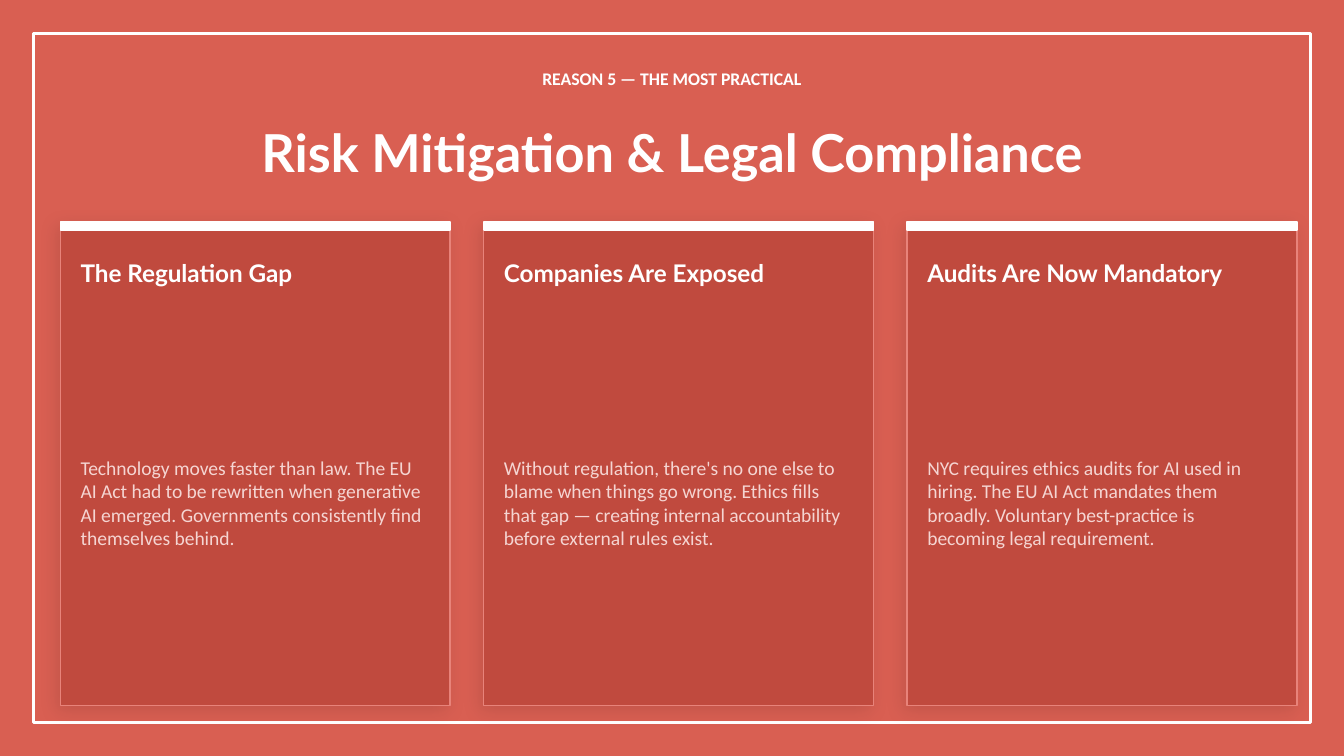
import pptx
import pptx.dml.color
import pptx.enum.shapes
import pptx.enum.text
import pptx.oxml
import pptx.oxml.ns
import pptx.util
from pptx.util import Inches

# Content
KICKER = "REASON 5 — THE MOST PRACTICAL"
TITLE = "Risk Mitigation & Legal Compliance"
CARDS = [
    ("The Regulation Gap",
     "Technology moves faster than law. The EU AI Act had to be rewritten when "
     "generative AI emerged. Governments consistently find themselves behind."),
    ("Companies Are Exposed",
     "Without regulation, there's no one else to blame when things go wrong. Ethics "
     "fills that gap — creating internal accountability before external rules exist."),
    ("Audits Are Now Mandatory",
     "NYC requires ethics audits for AI used in hiring. The EU AI Act mandates them "
     "broadly. Voluntary best-practice is becoming legal requirement."),
]

# Style
BACKGROUND, WHITE = "D95F52", "FFFFFF"
CARD_FILL, CARD_LINE, BODY_COLOR = "C04A3E", "E8837A", "F5D5D2"
HEADING_FONT, BODY_FONT = "Lato", "Calibri"

# Widescreen slide, frame margin and card grid, in inches
SLIDE_WIDTH = 10
SLIDE_HEIGHT = SLIDE_WIDTH * 9 / 16
MARGIN = 0.25
CARD_LEFT, CARD_TOP, CARD_WIDTH, CARD_HEIGHT = 0.45, 1.65, 2.9, 3.6
CARD_GAP, CARD_PADDING = 0.25, 0.15


def color(value):
    return pptx.dml.color.RGBColor.from_string(value)


def add_rectangle(slide, left, top, width, height, fill, line, line_width):
    shape = slide.shapes.add_shape(
        pptx.enum.shapes.MSO_SHAPE.RECTANGLE,
        Inches(left), Inches(top), Inches(width), Inches(height))
    shape.shadow.inherit = False
    if fill:
        shape.fill.solid()
        shape.fill.fore_color.rgb = color(fill)
    else:
        shape.fill.background()
    shape.line.color.rgb = color(line)
    shape.line.width = pptx.util.Pt(line_width)
    return shape


def add_soft_shadow(shape):
    effects = shape._element.spPr.find(pptx.oxml.ns.qn("a:effectLst"))
    effects.append(pptx.oxml.parse_xml(
        f'<a:outerShdw {pptx.oxml.ns.nsdecls("a")} blurRad="{pptx.util.Pt(10)}" '
        f'dist="{pptx.util.Pt(3)}" dir="{135 * 60000}" algn="bl" rotWithShape="0">'
        '<a:srgbClr val="000000"><a:alpha val="10000"/></a:srgbClr></a:outerShdw>'))


def add_text(slide, text, left, top, width, height, font, size,
             text_color=WHITE, bold=True, centered=False):
    box = slide.shapes.add_textbox(
        Inches(left), Inches(top), Inches(width), Inches(height))
    frame = box.text_frame
    frame.word_wrap = True
    frame.margin_left = frame.margin_right = frame.margin_top = frame.margin_bottom = 0
    frame.vertical_anchor = pptx.enum.text.MSO_ANCHOR.MIDDLE
    frame.text = text
    paragraph = frame.paragraphs[0]
    alignment = pptx.enum.text.PP_ALIGN
    paragraph.alignment = alignment.CENTER if centered else alignment.LEFT
    run_font = paragraph.runs[0].font
    run_font.name = font
    run_font.size = pptx.util.Pt(size)
    run_font.bold = bold
    run_font.color.rgb = color(text_color)


def add_card(slide, left, heading, body):
    card = add_rectangle(slide, left, CARD_TOP, CARD_WIDTH, CARD_HEIGHT,
                         CARD_FILL, CARD_LINE, 0.75)
    add_soft_shadow(card)
    add_rectangle(slide, left, CARD_TOP, CARD_WIDTH, 0.06, WHITE, WHITE, 1)
    text_left = left + CARD_PADDING
    text_width = CARD_WIDTH - 2 * CARD_PADDING
    add_text(slide, heading, text_left, CARD_TOP + 0.12, text_width, 0.52,
             HEADING_FONT, 13)
    add_text(slide, body, text_left, CARD_TOP + 0.73, text_width, 2.72,
             BODY_FONT, 10.5, BODY_COLOR, bold=False)


def main():
    presentation = pptx.Presentation()
    presentation.slide_width = Inches(SLIDE_WIDTH)
    presentation.slide_height = Inches(SLIDE_HEIGHT)
    slide = presentation.slides.add_slide(presentation.slide_layouts[6])
    slide.background.fill.solid()
    slide.background.fill.fore_color.rgb = color(BACKGROUND)

    # Frame and headings
    add_rectangle(slide, MARGIN, MARGIN, SLIDE_WIDTH - 2 * MARGIN,
                  SLIDE_HEIGHT - 2 * MARGIN, None, WHITE, 1.5)
    add_text(slide, KICKER, 0.5, 0.42, 9, 0.32, BODY_FONT, 9.5, centered=True)
    add_text(slide, TITLE, 0.5, 0.77, 9, 0.72, HEADING_FONT, 28, centered=True)

    # Three cards
    for index, (heading, body) in enumerate(CARDS):
        add_card(slide, CARD_LEFT + index * (CARD_WIDTH + CARD_GAP), heading, body)

    presentation.save("out.pptx")


if __name__ == "__main__":
    main()
